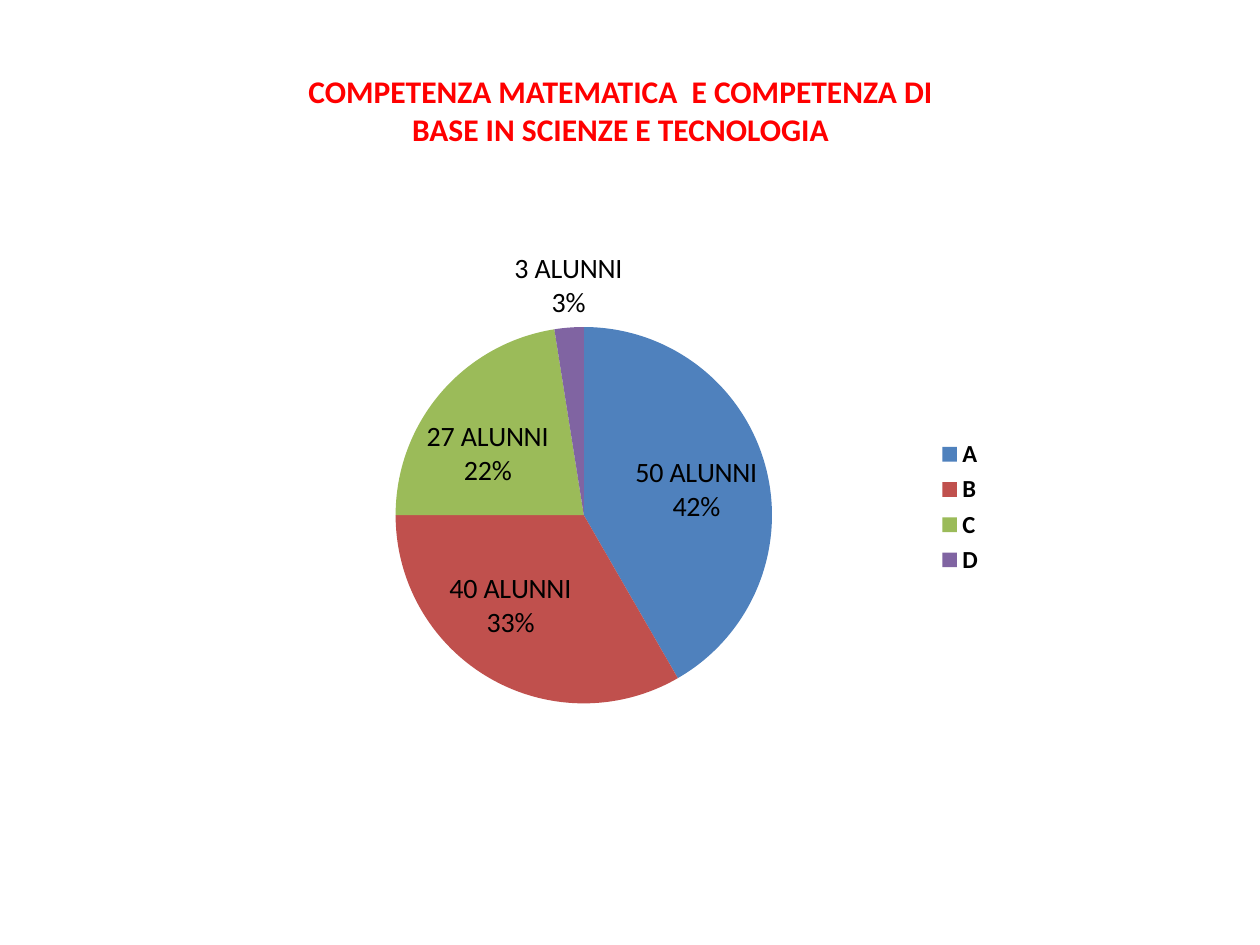
from lxml import etree
from pptx import Presentation
from pptx.chart.data import CategoryChartData
from pptx.dml.color import RGBColor
from pptx.enum.chart import XL_CHART_TYPE, XL_LABEL_POSITION, XL_LEGEND_POSITION
from pptx.enum.text import PP_ALIGN
from pptx.oxml.ns import qn
from pptx.util import Inches, Pt

COLORS = {"title": "FF0000", "text": "000000",
          "A": "4F81BD", "B": "C0504D", "C": "9BBB59", "D": "8064A2"}
PUPILS = {"A": 50, "B": 40, "C": 27, "D": 3}
PERCENTAGES = ["42%", "33%", "22%", "3%"]
PLOT_LAYOUT = {"x": 0.24, "y": 0.17, "w": 0.48, "h": 0.69}


def style_font(font, size, color, bold=False):
    font.name = "Calibri"
    font.size = Pt(size)
    font.bold = bold
    font.color.rgb = RGBColor.from_string(COLORS[color])


presentation = Presentation()
presentation.slide_width = Inches(10)
presentation.slide_height = Inches(7.5)
slide = presentation.slides.add_slide(presentation.slide_layouts[6])

# Title
title = slide.shapes.add_textbox(Inches(2.17), Inches(0.52), Inches(5.51), Inches(0.71))
title.text_frame.word_wrap = True
paragraph = title.text_frame.paragraphs[0]
paragraph.text = "COMPETENZA MATEMATICA  E COMPETENZA DI BASE IN SCIENZE E TECNOLOGIA"
paragraph.alignment = PP_ALIGN.CENTER
style_font(paragraph.font, 18, "title", bold=True)

# Pie chart
chart_data = CategoryChartData()
chart_data.categories = list(PUPILS)
chart_data.add_series("Series 1", list(PUPILS.values()))
chart = slide.shapes.add_chart(
    XL_CHART_TYPE.PIE, Inches(1.61), Inches(1.86), Inches(6.3), Inches(4.33), chart_data
).chart
chart.has_title = False
style_font(chart.font, 10, "text")

chart.has_legend = True
chart.legend.position = XL_LEGEND_POSITION.RIGHT
chart.legend.include_in_layout = False
style_font(chart.legend.font, 14, "text", bold=True)

# Slices with their pupil count and share
plot = chart.plots[0]
plot.vary_by_categories = True
series = plot.series[0]
series_labels = series.data_labels
series_labels.show_value = True
series_labels.show_percentage = True
style_font(series_labels.font, 16, "text", bold=True)

for index, (grade, count) in enumerate(PUPILS.items()):
    point = series.points[index]
    point.format.fill.solid()
    point.format.fill.fore_color.rgb = RGBColor.from_string(COLORS[grade])
    label = point.data_label
    label.text_frame.text = f"{count} ALUNNI\n{PERCENTAGES[index]}"
    for paragraph in label.text_frame.paragraphs:
        style_font(paragraph.font, 16, "text")
        for run in paragraph.runs:
            style_font(run.font, 16, "text")
    label.position = XL_LABEL_POSITION.BEST_FIT

for show_percent in series_labels._element.iter(qn("c:showPercent")):
    show_percent.set("val", "1")

# Fixed plot area inside the chart frame
plot_area = chart._chartSpace.chart.plotArea
for old_layout in plot_area.findall(qn("c:layout")):
    plot_area.remove(old_layout)
layout = etree.Element(qn("c:layout"))
plot_area.insert(0, layout)
manual_layout = etree.SubElement(layout, qn("c:manualLayout"))
settings = {"layoutTarget": "inner", "xMode": "edge", "yMode": "edge", **PLOT_LAYOUT}
for name, value in settings.items():
    etree.SubElement(manual_layout, qn(f"c:{name}")).set("val", str(value))

presentation.save("out.pptx")
